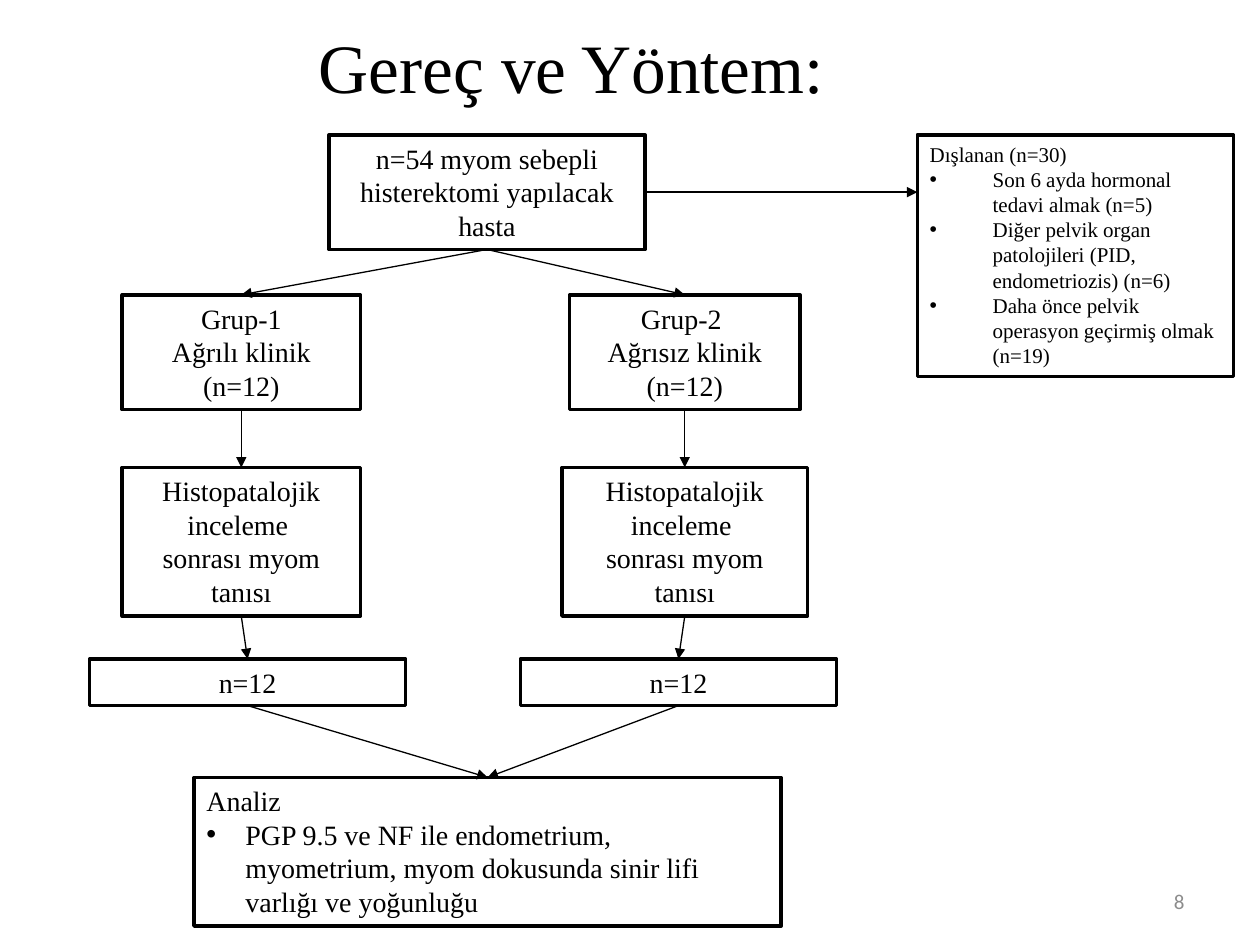
from lxml.etree import SubElement
from pptx import Presentation
from pptx.dml.color import RGBColor
from pptx.enum.shapes import MSO_CONNECTOR, MSO_SHAPE
from pptx.enum.text import MSO_ANCHOR, MSO_AUTO_SIZE, PP_ALIGN
from pptx.oxml.ns import qn
from pptx.util import Inches, Pt

COLORS = {"ink": "000000", "paper": "FFFFFF", "number": "8C8C8C"}
SERIF = "Times New Roman"
TOP, LEFT, BOTTOM, RIGHT = range(4)

DIAGNOSIS = ["Histopatalojik inceleme ", "sonrası myom tanısı"]

# name: (left, top, width, height), centred lines
STEPS = {
    "patients": ((2.61, 1.07, 2.51, 0.91), ["n=54 myom sebepli histerektomi yapılacak hasta"]),
    "group 1": ((0.97, 2.34, 1.89, 0.91), ["Grup-1", "Ağrılı klinik (n=12)"]),
    "group 2": ((4.52, 2.34, 1.83, 0.91), ["Grup-2 ", "Ağrısız klinik (n=12)"]),
    "diagnosis 1": ((0.97, 3.71, 1.89, 1.18), DIAGNOSIS),
    "diagnosis 2": ((4.46, 3.71, 1.95, 1.18), DIAGNOSIS),
    "count 1": ((0.71, 5.23, 2.51, 0.37), ["n=12"]),
    "count 2": ((4.13, 5.23, 2.51, 0.37), ["n=12"]),
}

# name: (left, top, width, height), size, indent, heading, bullets
LISTS = {
    "excluded": ((7.28, 1.07, 2.51, 1.92), 12, 0.5, "Dışlanan (n=30)", [
        "Son 6 ayda hormonal tedavi almak (n=5)",
        "Diğer pelvik organ patolojileri (PID, endometriozis) (n=6)",
        "Daha önce pelvik operasyon geçirmiş olmak (n=19)",
    ]),
    "analysis": ((1.54, 6.17, 4.66, 1.18), 16, 0.31, "Analiz", [
        "PGP 9.5 ve NF ile endometrium, myometrium, myom dokusunda sinir lifi "
        "varlığı ve yoğunluğu",
    ]),
}

BRANCHES = [("patients", "group"), ("group", "diagnosis"),
            ("diagnosis", "count"), ("count", "analysis")]


def color(name):
    return RGBColor.from_string(COLORS[name])


def write(frame, lines, size, align, font=SERIF, ink="ink"):
    for index, line in enumerate(lines):
        paragraph = frame.paragraphs[0] if index == 0 else frame.add_paragraph()
        paragraph.alignment = align
        run = paragraph.add_run()
        run.text = line
        run.font.size = Pt(size)
        run.font.name = font
        run.font.color.rgb = color(ink)


def add_label(slide, area, text, size, align, **style):
    frame = slide.shapes.add_textbox(*map(Inches, area)).text_frame
    frame.word_wrap = True
    frame.vertical_anchor = MSO_ANCHOR.MIDDLE
    write(frame, [text], size, align, **style)


def add_box(slide, area, lines, size, align):
    box = slide.shapes.add_shape(MSO_SHAPE.RECTANGLE, *map(Inches, area))
    box.shadow.inherit = False
    box.fill.solid()
    box.fill.fore_color.rgb = color("paper")
    box.line.color.rgb = color("ink")
    box.line.width = Pt(2)
    frame = box.text_frame
    frame.word_wrap = True
    frame.auto_size = MSO_AUTO_SIZE.SHAPE_TO_FIT_TEXT
    frame.vertical_anchor = MSO_ANCHOR.TOP
    write(frame, lines, size, align)
    return box


def add_bullet(paragraph, indent):
    properties = paragraph._p.get_or_add_pPr()
    properties.set("marL", str(Inches(indent)))
    properties.set("indent", str(-Inches(indent)))
    SubElement(properties, qn("a:buFont")).set("typeface", "Arial")
    SubElement(properties, qn("a:buChar")).set("char", "•")


def add_arrow(slide, begin_x, begin_y, end_x, end_y):
    arrow = slide.shapes.add_connector(
        MSO_CONNECTOR.STRAIGHT, begin_x, begin_y, end_x, end_y)
    arrow.line.color.rgb = color("ink")
    arrow.line.width = Pt(0.75)
    SubElement(arrow.line._get_or_add_ln(), qn("a:tailEnd")).set("type", "triangle")
    SubElement(arrow._element.spPr, qn("a:effectLst"))
    return arrow


def main():
    presentation = Presentation()
    presentation.slide_width, presentation.slide_height = Inches(10), Inches(7.5)
    slide = presentation.slides.add_slide(presentation.slide_layouts[6])

    add_label(slide, (0, 0.29, 9.07, 0.46), "Gereç ve Yöntem:", 39.6, PP_ALIGN.CENTER)
    add_label(slide, (7.17, 6.95, 2.33, 0.4), "8", 12, PP_ALIGN.RIGHT,
              font="Calibri", ink="number")

    boxes = {}
    for name, (area, lines) in STEPS.items():
        boxes[name] = add_box(slide, area, lines, 16, PP_ALIGN.CENTER)
    for name, (area, size, indent, heading, bullets) in LISTS.items():
        boxes[name] = add_box(slide, area, [heading, *bullets], size, PP_ALIGN.LEFT)
        for paragraph in boxes[name].text_frame.paragraphs[1:]:
            add_bullet(paragraph, indent)

    for group in (1, 2):
        for ends in BRANCHES:
            start, end = (boxes.get(name) or boxes[f"{name} {group}"] for name in ends)
            arrow = add_arrow(slide, start.left + start.width // 2, start.top + start.height,
                              end.left + end.width // 2, end.top)
            arrow.begin_connect(start, BOTTOM)
            arrow.end_connect(end, TOP)

    # The excluded box is taller, so a level arrow meets its side above the middle.
    patients, excluded = boxes["patients"], boxes["excluded"]
    middle = patients.top + patients.height // 2
    arrow = add_arrow(slide, patients.left + patients.width, middle, excluded.left, middle)
    arrow.begin_connect(patients, RIGHT)

    presentation.save("out.pptx")


if __name__ == "__main__":
    main()
